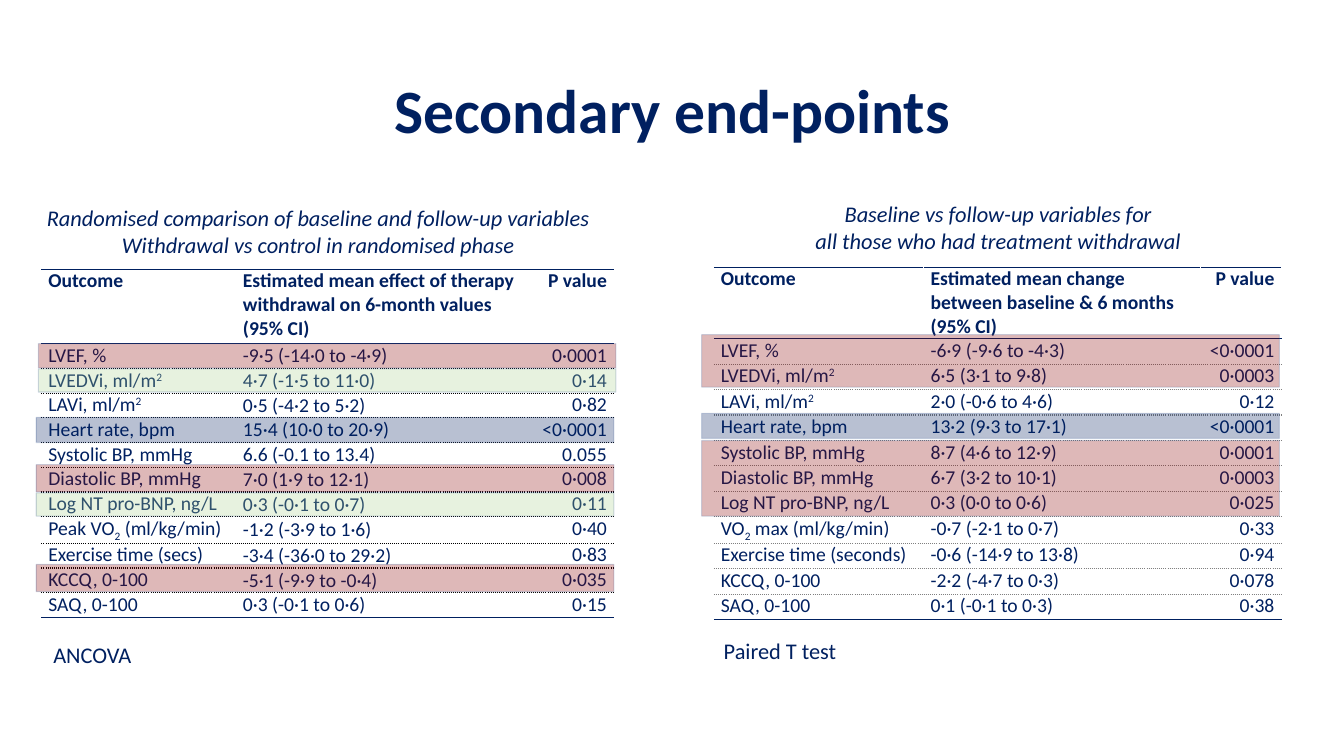
from dataclasses import dataclass
from itertools import groupby

from lxml.etree import SubElement
from pptx import Presentation
from pptx.dml.color import RGBColor
from pptx.dml.fill import FillFormat
from pptx.enum.shapes import MSO_SHAPE as Shape
from pptx.enum.text import MSO_ANCHOR as Anchor, MSO_AUTO_SIZE as AutoSize, PP_ALIGN as Align
from pptx.oxml.ns import qn
from pptx.util import Emu, Pt

EMU_PER_PX = 9144
NAVY, RED, GREEN, OUTLINE = "002060", "8A0000", "A9D18E", "325491"
BLACK, GREY, WHITE = "000000", "808080", "FFFFFF"
PLAIN_STYLE = "{2D5ABB26-0587-4C30-8999-92F81FD0307C}"
SCRIPTS = {"²": 30000, "₂": -25000}
SCRIPT_DIGITS = str.maketrans("²₂", "22")


@dataclass
class Band:
    left: int
    top: int
    height: int
    color: str


@dataclass
class Label:
    left: int
    top: int
    width: int
    height: int
    lines: list[str]
    italic: bool = False
    align: Align = Align.LEFT


@dataclass
class ResultTable:
    left: int
    top: int
    height: int
    header_height: int
    columns: list[int]
    rule_color: str
    rule_dash: str
    value_anchor: Anchor
    white_dividers: bool
    rows: list[tuple[str, str, str]]


BAND_WIDTH = 573
BANDS = [
    Band(38, 341, 24, RED),
    Band(36, 461, 27, RED),
    Band(36, 414, 25, NAVY),
    Band(36, 560, 27, RED),
    Band(38, 366, 23, GREEN),
    Band(36, 489, 23, GREEN),
    Band(696, 332, 52, RED),
    Band(696, 437, 75, RED),
    Band(696, 410, 25, NAVY),
]

LABELS = [
    Label(32, 198, 567, 64, ["Randomised comparison of baseline and follow-up variables",
                             "Withdrawal vs control in randomised phase"], True, Align.CENTER),
    Label(43, 631, 99, 37, ["ANCOVA"]),
    Label(796, 194, 388, 64, ["Baseline vs follow-up variables for",
                              "all those who had treatment withdrawal"], True, Align.CENTER),
    Label(708, 627, 133, 37, ["Paired T test"]),
]

TABLES = [
    ResultTable(41, 267, 344, 74, [193, 296, 79], BLACK, "dot", Anchor.MIDDLE, False, [
        ("Outcome", "Estimated mean effect of therapy withdrawal on 6-month values (95% CI)", "P value"),
        ("LVEF, %", "-9·5 (-14·0 to -4·9)", "0·0001"),
        ("LVEDVi, ml/m²", "4·7 (-1·5 to 11·0)", "0·14"),
        ("LAVi, ml/m²", "0·5 (-4·2 to 5·2)", "0·82"),
        ("Heart rate, bpm", "15·4 (10·0 to 20·9)", "<0·0001"),
        ("Systolic BP, mmHg", "6.6 (-0.1 to 13.4)", "0.055"),
        ("Diastolic BP, mmHg", "7·0 (1·9 to 12·1)", "0·008"),
        ("Log NT pro-BNP, ng/L", "0·3 (-0·1 to 0·7)", "0·11"),
        ("Peak VO₂ (ml/kg/min)", "-1·2 (-3·9 to 1·6)", "0·40"),
        ("Exercise time (secs)", "-3·4 (-36·0 to 29·2)", "0·83"),
        ("KCCQ, 0-100", "-5·1 (-9·9 to -0·4)", "0·035"),
        ("SAQ, 0-100", "0·3 (-0·1 to 0·6)", "0·15"),
    ]),
    ResultTable(708, 265, 348, 70, [208, 275, 80], GREY, "sysDot", Anchor.TOP, True, [
        ("Outcome", "Estimated mean change between baseline & 6 months (95% CI)", "P value"),
        ("LVEF, %", "-6·9 (-9·6 to -4·3)", "<0·0001"),
        ("LVEDVi, ml/m²", "6·5 (3·1 to 9·8)", "0·0003"),
        ("LAVi, ml/m²", "2·0 (-0·6 to 4·6)", "0·12"),
        ("Heart rate, bpm", "13·2 (9·3 to 17·1)", "<0·0001"),
        ("Systolic BP, mmHg", "8·7 (4·6 to 12·9)", "0·0001"),
        ("Diastolic BP, mmHg", "6·7 (3·2 to 10·1)", "0·0003"),
        ("Log NT pro-BNP, ng/L", "0·3 (0·0 to 0·6)", "0·025"),
        ("VO₂ max (ml/kg/min)", "-0·7 (-2·1 to 0·7)", "0·33"),
        ("Exercise time (seconds)", "-0·6 (-14·9 to 13·8)", "0·94"),
        ("KCCQ, 0-100", "-2·2 (-4·7 to 0·3)", "0·078"),
        ("SAQ, 0-100", "0·1 (-0·1 to 0·3)", "0·38"),
    ]),
]


def px(length: int) -> Emu:
    return Emu(length * EMU_PER_PX)


def rgb(color: str) -> RGBColor:
    return RGBColor.from_string(color)


def format_paragraph(paragraph, size: int, align: Align, bold: bool = False, italic: bool = False) -> None:
    paragraph.alignment = align
    font = paragraph.font
    font.name, font.size, font.bold, font.italic = "Calibri", Pt(size), bold, italic
    font.color.rgb = rgb(NAVY)


def add_scripted_text(paragraph, text: str) -> None:
    for baseline, characters in groupby(text, lambda character: SCRIPTS.get(character, 0)):
        run = paragraph.add_run()
        run.text = "".join(characters).translate(SCRIPT_DIGITS)
        if baseline:
            run._r.get_or_add_rPr().set("baseline", str(baseline))


def add_border(cell, side: str, color: str, dash: str = "solid") -> None:
    line = SubElement(cell._tc.get_or_add_tcPr(), qn(f"a:ln{side}"), w=str(Pt(1)))
    fill = SubElement(line, qn("a:solidFill"))
    SubElement(fill, qn("a:srgbClr"), val=color)
    SubElement(line, qn("a:prstDash"), val=dash)


def set_solid(fill: FillFormat, color: str, opacity: int) -> None:
    fill.solid()
    fill.fore_color.rgb = rgb(color)
    color_element = fill._xPr.find(f"{qn('a:solidFill')}/{qn('a:srgbClr')}")
    SubElement(color_element, qn("a:alpha"), val=str(opacity * 1000))


def add_result_table(slide, result: ResultTable) -> None:
    last_row = len(result.rows) - 1
    frame = slide.shapes.add_table(len(result.rows), len(result.columns), px(result.left), px(result.top),
                                   px(sum(result.columns)), px(result.height))
    table = frame.table
    table.first_row = table.horz_banding = False
    table._tbl.tblPr.find(qn("a:tableStyleId")).text = PLAIN_STYLE
    for column, width in zip(table.columns, result.columns):
        column.width = px(width)
    body_height = px(result.height - result.header_height) // last_row
    dotted = (result.rule_color, result.rule_dash)
    for row_index, texts in enumerate(result.rows):
        table.rows[row_index].height = body_height if row_index else px(result.header_height)
        for column_index, text in enumerate(texts):
            cell = table.cell(row_index, column_index)
            cell.margin_left = cell.margin_right = px(7)
            cell.margin_top = cell.margin_bottom = 0
            is_value = row_index > 0 and column_index == 1
            cell.vertical_anchor = result.value_anchor if is_value else Anchor.TOP
            if result.white_dividers:
                add_border(cell, "L" if column_index == 1 else "R", WHITE)
            add_border(cell, "T", *((NAVY,) if row_index <= 1 else dotted))
            add_border(cell, "B", *((NAVY,) if row_index in (0, last_row) else dotted))
            cell.fill.background()
            paragraph = cell.text_frame.paragraphs[0]
            add_scripted_text(paragraph, text)
            format_paragraph(paragraph, 14, Align.RIGHT if column_index == 2 else Align.LEFT, row_index == 0)


def add_band(slide, band: Band) -> None:
    shape = slide.shapes.add_shape(Shape.RECTANGLE, px(band.left), px(band.top), px(BAND_WIDTH), px(band.height))
    shape.shadow.inherit = False
    set_solid(shape.fill, band.color, 28)
    shape.line.width = 0
    set_solid(shape.line.fill, OUTLINE, 22)


def add_label(slide, label: Label) -> None:
    box = slide.shapes.add_textbox(px(label.left), px(label.top), px(label.width), px(label.height))
    frame = box.text_frame
    frame.word_wrap = False
    frame.auto_size = AutoSize.SHAPE_TO_FIT_TEXT
    frame.text = "\n".join(label.lines)
    for paragraph in frame.paragraphs:
        format_paragraph(paragraph, 16, label.align, italic=label.italic)


def set_title(slide, text: str) -> None:
    title = slide.shapes.title
    title.left, title.top, title.width, title.height = px(92), px(40), px(1150), px(145)
    title.text_frame.text = text
    title.text_frame.vertical_anchor = Anchor.MIDDLE
    paragraph = title.text_frame.paragraphs[0]
    paragraph.line_spacing = 0.9
    format_paragraph(paragraph, 44, Align.CENTER, bold=True)


def main() -> None:
    presentation = Presentation()
    presentation.slide_width, presentation.slide_height = px(1333), px(750)
    slide = presentation.slides.add_slide(presentation.slide_layouts[5])
    set_title(slide, "Secondary end-points")
    for result in TABLES:
        add_result_table(slide, result)
    for band in BANDS:
        add_band(slide, band)
    for label in LABELS:
        add_label(slide, label)
    presentation.save("out.pptx")


if __name__ == "__main__":
    main()
